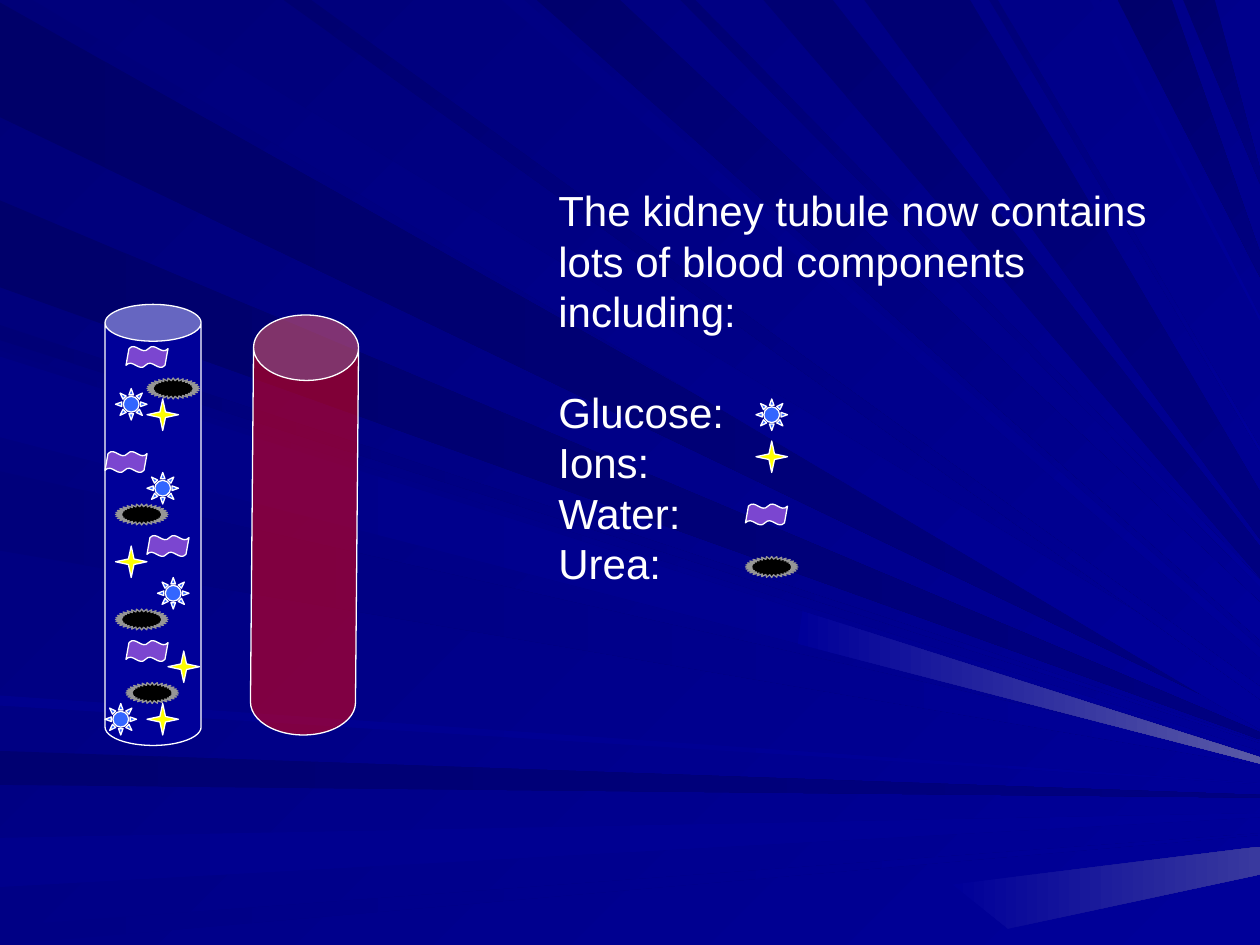
from dataclasses import dataclass

from lxml import etree
from pptx import Presentation
from pptx.dml.color import RGBColor
from pptx.enum.shapes import MSO_SHAPE
from pptx.oxml.ns import qn
from pptx.util import Emu, Inches, Pt

CAN = MSO_SHAPE.CAN
SUN = MSO_SHAPE.SUN
STAR = MSO_SHAPE.STAR_4_POINT
WAVE = MSO_SHAPE.DOUBLE_WAVE
BURST = MSO_SHAPE.STAR_32_POINT


@dataclass(frozen=True)
class Theme:
    font: str = "Arial"
    body: float = 24
    leading: float = 28.8
    outline: float = 0.75
    text: str = "FFFFFF"
    line: str = "FFFFFF"
    rim: str = "969696"
    night: str = "000078"
    navy: str = "000099"
    dusk: str = "000080"
    glow: str = "5A5AA6"
    haze: str = "39399E"
    blood: str = "FF0000"
    glucose: str = "3366FF"
    ions: str = "FFFF00"
    water: str = "7B46D0"
    urea: str = "000000"


THEME = Theme()
COLUMNS = 120

# Component: preset, adjustments, columns, rows, fill, outline
MARKERS = {
    "Glucose": (SUN, [0.25], 3, 3, THEME.glucose, THEME.line),
    "Ions": (STAR, [0.125], 3, 3, THEME.ions, THEME.line),
    "Water": (WAVE, [0.103, -0.036], 4, 2, THEME.water, THEME.line),
    "Urea": (BURST, [0.375], 5, 2, THEME.urea, THEME.rim),
}
# Column and row offsets inside the tubule, in stacking order
CONTENTS = {
    "Water": [(2, 32), (0, 14), (4, 22), (2, 4)],
    "Glucose": [(1, 8), (4, 16), (0, 38), (5, 26)],
    "Urea": [(1, 29), (2, 36), (1, 19), (4, 7)],
    "Ions": [(1, 23), (4, 9), (4, 38), (6, 33)],
}
# Column and row offsets inside the legend box
LEGEND = {"Glucose": (20, 21), "Ions": (20, 25), "Water": (19, 31), "Urea": (19, 36)}

# Rays in tenths of the slide's width: start on the left or top edge, breadth
# there, height reached on the right edge, start colour, end colour
LEFT_RAYS = [
    (0.02, 0.91, 5.7, "000069", THEME.dusk),
    (5.96, 0.27, 6.32, "000071", THEME.dusk),
    (6.65, 0.39, 6.47, "00008C", THEME.navy),
    (7.35, 0.15, 6.62, "000085", THEME.navy),
    (2.58, 0.12, 5.89, "000076", THEME.navy),
    (1.59, 0.69, 5.84, "00006B", THEME.dusk),
    (2.78, 0.64, 5.99, "00007E", THEME.navy),
    (3.74, 0.63, 6.05, "00007B", THEME.navy),
    (5.52, 0.08, 6.22, "00008E", THEME.navy),
    (2.83, 0.64, 6.03, "000085", THEME.navy),
]
TOP_RAYS = [
    (0.26, 0.75, 5.62, "00007B", THEME.navy),
    (3.98, 0.18, 5.18, "000083", THEME.navy),
    (4.26, 0.66, 4.93, "00006D", THEME.navy),
    (5.4, 0.12, 4.63, "000073", THEME.navy),
    (6.06, 0.55, 4.46, "000073", THEME.dusk),
    (8.87, 0.43, 2.1, "00006B", THEME.dusk),
    (9.39, 0.25, 1.4, "00006D", THEME.dusk),
    (2.25, 0.22, 5.5, "000070", THEME.navy),
    (6.86, 0.84, 4.09, "000073", THEME.dusk),
    (7.85, 0.07, 3.57, "000078", THEME.navy),
    (8.65, 0.07, 2.53, "00008A", THEME.navy),
]
LEFT_TAPER, TOP_TAPER = 0.08, 0.45
# Bright ends of rays on the right
GLOWS = [
    (THEME.glow, [(6.37, 4.85), (6.33, 5.11), (10, 6.06), (10, 6.01)]),
    (THEME.haze, [(10, 6.94), (10, 6.72), (7.56, 7.02), (8, 7.37)]),
]


def paint(fill, start, end, angle=0):
    """Fill with one colour, or with a gradient running clockwise at angle."""
    if start == end:
        fill.solid()
        fill.fore_color.rgb = RGBColor.from_string(start)
        return
    fill.gradient()
    fill.gradient_angle = -angle % 360
    for stop, color in zip(fill.gradient_stops, (start, end)):
        stop.color.rgb = RGBColor.from_string(color)


def add_preset(page, cell, preset, box, adjustments, color, line):
    left, top, width, height = (round(cell * n) for n in box)
    shape = page.shapes.add_shape(preset, left, top, width, height)
    for index, value in enumerate(adjustments):
        shape.adjustments[index] = value
    shape.shadow.inherit = False
    paint(shape.fill, color, color)
    shape.line.color.rgb = RGBColor.from_string(line)
    shape.line.width = Pt(THEME.outline)
    return shape


def add_marker(page, cell, name, column, row):
    preset, adjustments, columns, rows, color, line = MARKERS[name]
    add_preset(page, cell, preset, (column, row, columns, rows), adjustments, color, line)


def add_polygon(page, unit, corners, start, end, angle):
    points = [(Emu(round(x * unit)), Emu(round(y * unit))) for x, y in corners]
    builder = page.shapes.build_freeform(*points[0], scale=1.0)
    builder.add_line_segments(points[1:], close=True)
    polygon = builder.convert_to_shape()
    polygon.shadow.inherit = False
    paint(polygon.fill, start, end, angle)
    polygon.line.fill.background()


def add_backdrop(page, unit):
    paint(page.background.fill, THEME.night, THEME.navy, 45)
    for edge, breadth, reach, start, end in LEFT_RAYS:
        half = breadth * LEFT_TAPER / 2
        corners = [(0, edge), (0, edge + breadth), (10, reach + half), (10, reach - half)]
        add_polygon(page, unit, corners, start, end, 0)
    for edge, breadth, reach, start, end in TOP_RAYS:
        half = breadth * TOP_TAPER / 2
        corners = [(edge, 0), (10, reach + half), (10, reach - half), (edge + breadth, 0)]
        add_polygon(page, unit, corners, start, end, 45)
    for color, corners in GLOWS:
        add_polygon(page, unit, corners, THEME.navy, color, 0)


def add_tubule(page, cell, box):
    add_preset(page, cell, CAN, box, [0.383], THEME.navy, THEME.line)


def add_contents(page, cell, box):
    for name, offsets in CONTENTS.items():
        for column, row in offsets:
            add_marker(page, cell, name, box[0] + column, box[1] + row)


def add_vessel(page, cell, box):
    vessel = add_preset(page, cell, CAN, box, [0.623], THEME.blood, THEME.line)
    vessel.rotation = 0.5
    # Half-transparent blood
    color = vessel.fill._xPr.find(qn("a:solidFill"))[0]
    etree.SubElement(color, qn("a:alpha"), val="50000")


def add_legend(page, cell, box):
    frame = page.shapes.add_textbox(*(round(cell * n) for n in box)).text_frame
    frame.word_wrap = True
    intro = "The kidney tubule now contains lots of blood components including:"
    for index, text in enumerate([intro] + [f"{name}:" for name in LEGEND]):
        para = frame.add_paragraph() if index else frame.paragraphs[0]
        para.text = text
        para.line_spacing = Pt(THEME.leading)
        if index == 1:
            para.space_before = Pt(THEME.leading)
        para.font.name = THEME.font
        para.font.size = Pt(THEME.body)
        para.font.color.rgb = RGBColor.from_string(THEME.text)
    for name, (column, row) in LEGEND.items():
        add_marker(page, cell, name, box[0] + column, box[1] + row)


def main():
    deck = Presentation()
    deck.slide_width, deck.slide_height = Inches(10), Inches(7.5)
    page = deck.slides.add_slide(deck.slide_layouts[6])
    cell = deck.slide_width / COLUMNS
    tubule = (10, 29, 9.15, 42)

    add_backdrop(page, deck.slide_width / 10)
    add_tubule(page, cell, tubule)
    add_vessel(page, cell, (24, 30, 10, 40))
    add_legend(page, cell, (52, 17, 61, 40))
    add_contents(page, cell, tubule)
    deck.save("out.pptx")


if __name__ == "__main__":
    main()
